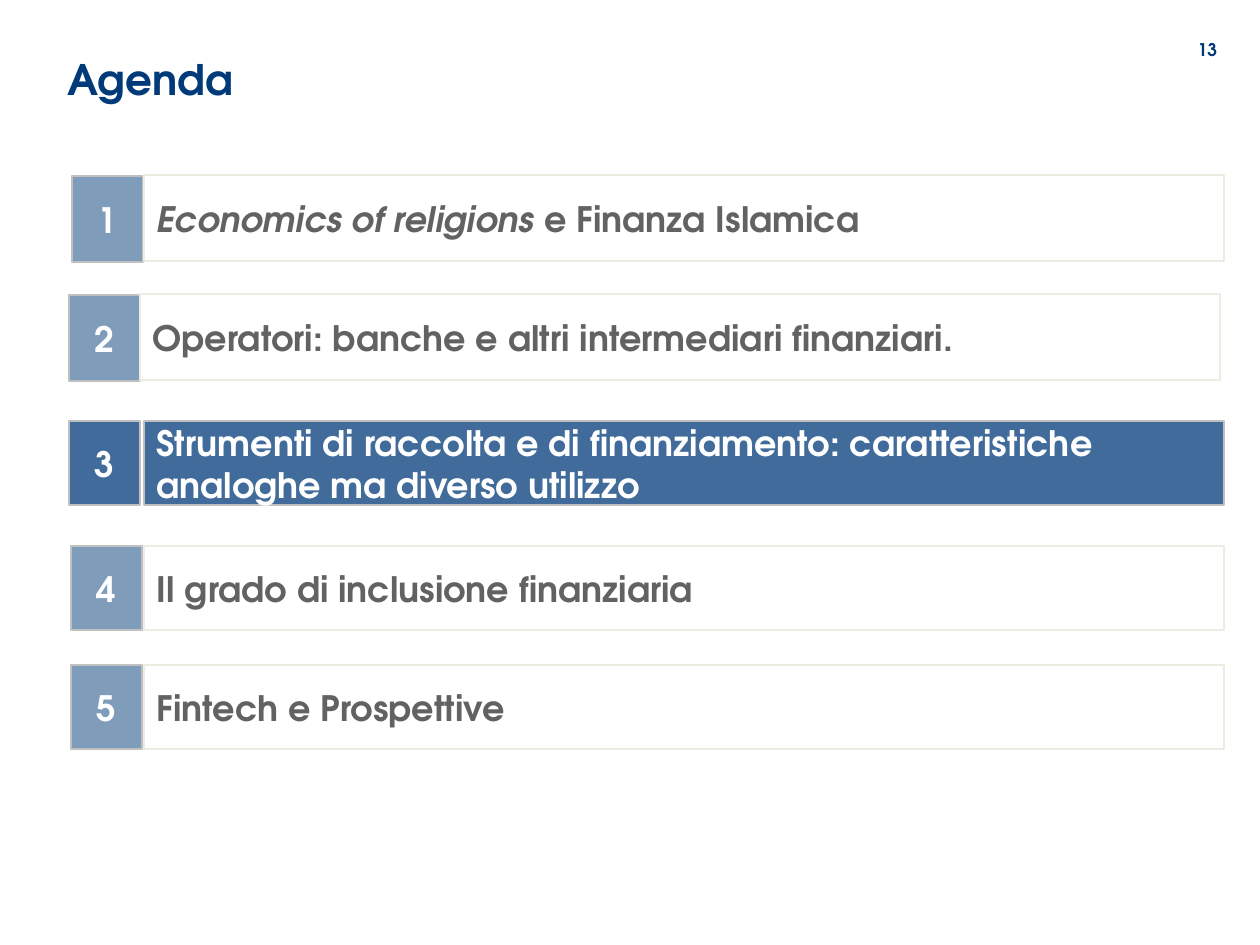
from lxml import etree
from pptx import Presentation
from pptx import util as u
from pptx.dml.color import RGBColor
from pptx.enum import shapes, text
from pptx.oxml.ns import qn

PX = 914400 / 126
FONT = "TeX Gyre Adventor"
COLORS = {
    "navy": "003A79",
    "white": "FFFFFF",
    "gray": "626262",
    "silver": "C0C0C0",
    "cream": "EEECE1",
}


def write(shape, runs, size=20, color="white", align=text.PP_ALIGN.LEFT, spacing=None):
    frame = shape.text_frame
    frame.word_wrap = True
    frame.vertical_anchor = text.MSO_ANCHOR.MIDDLE
    paragraph = frame.paragraphs[0]
    paragraph.alignment = align
    if spacing:
        paragraph.line_spacing = spacing
    for words, italic in runs:
        run = paragraph.add_run()
        run.text = words
        run.font.name = FONT
        run.font.size = u.Pt(size)
        run.font.bold = True
        run.font.italic = italic
        run.font.color.rgb = RGBColor.from_string(COLORS[color])


def add_bar(left, top, width, height, fill, line, opacity=100):
    shape = slide.shapes.add_shape(
        shapes.MSO_SHAPE.RECTANGLE, *(round(value * PX) for value in (left, top, width, height))
    )
    shape.shadow.inherit = False
    shape.fill.solid()
    shape.fill.fore_color.rgb = RGBColor.from_string(COLORS[fill])
    shape.line.color.rgb = RGBColor.from_string(COLORS[line])
    shape.line.width = u.Pt(0.75)
    if opacity < 100:
        color = shape.fill._xPr.find(qn("a:solidFill")).find(qn("a:srgbClr"))
        etree.SubElement(color, qn("a:alpha")).set("val", str(opacity * 1000))
    return shape


presentation = Presentation()
presentation.slide_width = round(1260 * PX)
presentation.slide_height = round(945 * PX)
slide = presentation.slides.add_slide(presentation.slide_layouts[6])

title = slide.shapes.add_textbox(*(round(value * PX) for value in (55, 50, 1080, 63)))
write(title, [("Agenda", False)], size=24, color="navy", spacing=0.9)

page_number = slide.shapes.add_textbox(*(round(value * PX) for value in (1179, 25, 57, 50)))
write(page_number, [("13", False)], size=10, color="navy", align=text.PP_ALIGN.CENTER)

current = 3
agenda = [
    (72, 176, 144, 175, 86, [("Economics of religions ", True), ("e Finanza Islamica", False)]),
    (69, 295, 140, 294, 86, [("Operatori: banche e altri intermediari finanziari.", False)]),
    (69, 421, 144, 421, 84, [
        ("Strumenti di raccolta e di finanziamento: caratteristiche analoghe ma diverso utilizzo", False),
    ]),
    (71, 546, 144, 546, 84, [("Il grado di inclusione finanziaria", False)]),
    (71, 665, 144, 665, 84, [("Fintech e Prospettive", False)]),
]

for number, (number_left, number_top, topic_left, topic_top, height, runs) in enumerate(agenda, 1):
    active = number == current
    number_box = add_bar(number_left, number_top, 71, height, "navy", "silver", 75 if active else 50)
    write(number_box, [(str(number), False)], align=text.PP_ALIGN.CENTER)
    if active:
        topic = add_bar(topic_left, topic_top, 1080, height, "navy", "silver", 75)
    else:
        topic = add_bar(topic_left, topic_top, 1080, height, "white", "cream")
    write(topic, runs, color="white" if active else "gray")

presentation.save("out.pptx")
